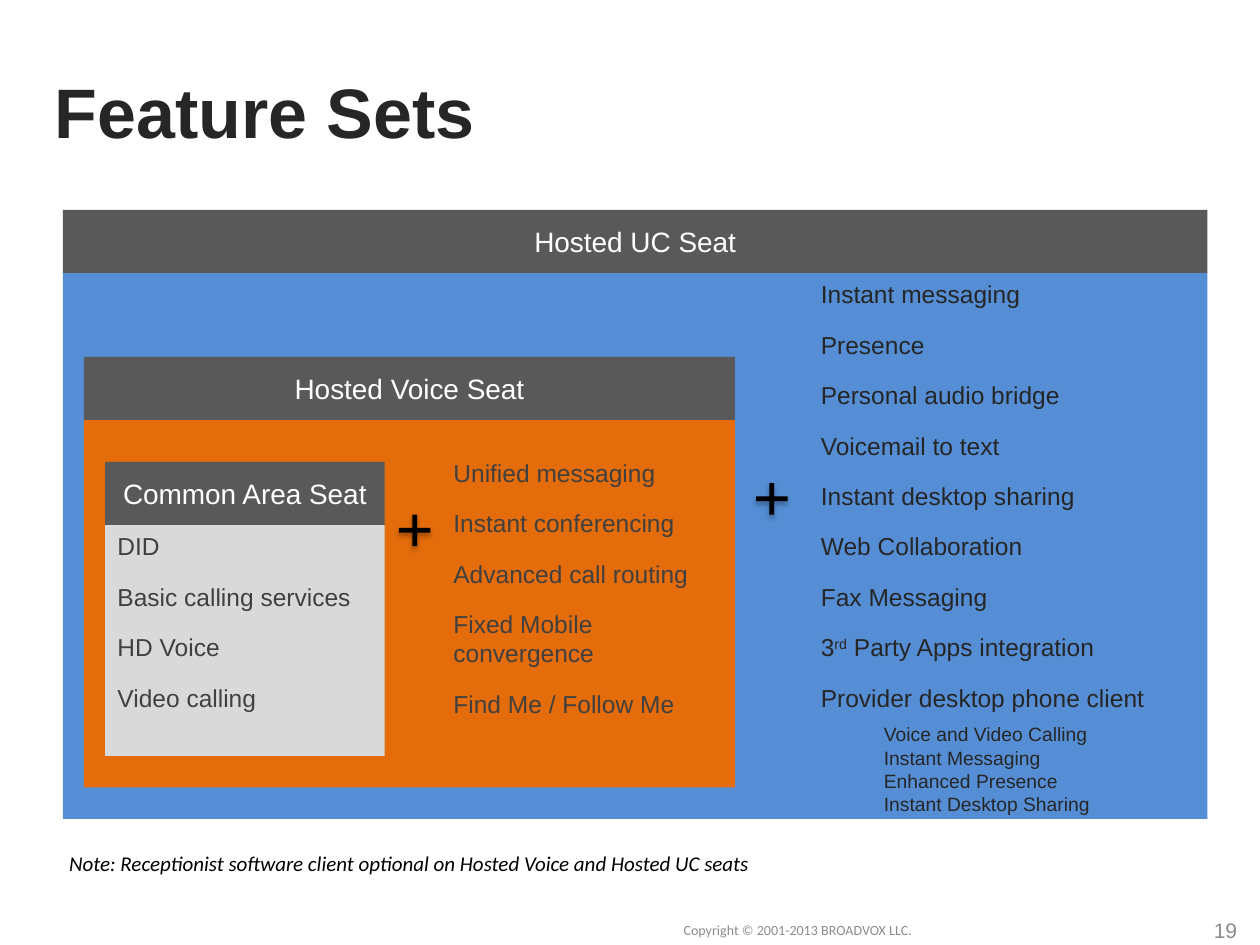
from collections import namedtuple

from lxml.etree import SubElement
from pptx import Presentation
from pptx.dml.color import RGBColor
from pptx.enum.shapes import MSO_SHAPE
from pptx.enum.text import MSO_ANCHOR, PP_ALIGN
from pptx.oxml.ns import qn
from pptx.util import Inches, Pt

GRID = Inches(1) / 12
HEADER_ROWS = 6
DARK, GREY, FOOTER_GREY = "262626", "404040", "8C8C8C"

Box = namedtuple("Box", "left top width height")


def inside(box, left, top, width, height):
    """Box given by its offset, in grid cells, from another box."""
    return Box(box.left + left, box.top + top, width, height)


def lengths(box):
    return [round(cells * GRID) for cells in box]


def colour(value):
    return RGBColor.from_string(value)


def write(frame, lines, size=14, color=DARK, font="Arial", bold=False, italic=False,
          align=PP_ALIGN.LEFT, anchor=MSO_ANCHOR.TOP, gap=0, level=0, wrap=True, append=False):
    """Write one paragraph per line; a line given as a tuple has its second part raised."""
    frame.word_wrap = wrap
    frame.vertical_anchor = anchor
    for index, line in enumerate(lines):
        first = index == 0 and not append
        paragraph = frame.paragraphs[0] if first else frame.add_paragraph()
        paragraph.alignment = align
        paragraph.level = level
        paragraph.space_before = Pt(0 if first else gap)
        paragraph.space_after = Pt(gap)
        if level:
            properties = paragraph._p.get_or_add_pPr()
            properties.set("marL", str(Inches(0.5) * level))
            properties.set("indent", "0")
        parts = line if isinstance(line, tuple) else (line,)
        for position, part in enumerate(parts):
            run = paragraph.add_run()
            run.text = part
            run.font.name, run.font.size = font, Pt(size)
            run.font.bold, run.font.italic = bold, italic
            run.font.color.rgb = colour(color)
            if position == 1:
                run.font._element.set("baseline", "30000")


def add_text(slide, box, lines, **text_format):
    frame = slide.shapes.add_textbox(*lengths(box)).text_frame
    write(frame, lines, **text_format)
    return frame


def add_filled(slide, kind, box, fill):
    shape = slide.shapes.add_shape(kind, *lengths(box))
    shape.shadow.inherit = False
    shape.fill.solid()
    shape.fill.fore_color.rgb = colour(fill)
    shape.line.fill.background()
    return shape


def add_seat(slide, box, name, fill):
    """Draw a seat panel with its header and return the text frame of its body."""
    body = Box(box.left, box.top + HEADER_ROWS, box.width, box.height - HEADER_ROWS)
    panel = add_filled(slide, MSO_SHAPE.RECTANGLE, body, fill)
    header = add_filled(slide, MSO_SHAPE.RECTANGLE, box._replace(height=HEADER_ROWS), "595959")
    write(header.text_frame, [name], size=16, color="FFFFFF",
          align=PP_ALIGN.CENTER, anchor=MSO_ANCHOR.MIDDLE)
    return panel.text_frame


def add_plus(slide, box):
    plus = add_filled(slide, MSO_SHAPE.CROSS, box, "000000")
    plus.adjustments[0] = 0.426
    effects = plus._element.spPr.find(qn("a:effectLst"))
    shadow = SubElement(effects, qn("a:outerShdw"), blurRad=str(Pt(3.1)),
                        dist=str(Pt(1.8)), dir="5400000", rotWithShape="0")
    black = SubElement(shadow, qn("a:srgbClr"), val="000000")
    SubElement(black, qn("a:alpha"), val="35000")


def add_common_area_seat(slide, box):
    body = add_seat(slide, box, "Common Area Seat", "D9D9D9")
    write(body, ["DID", "Basic calling services", "HD Voice", "Video calling"],
          color=GREY, gap=6)


def add_voice_seat(slide, box):
    add_seat(slide, box, "Hosted Voice Seat", "E46C0A")
    add_common_area_seat(slide, inside(box, 2, 10, 26.64, 28))
    add_plus(slide, inside(box, 30, 15, 3, 3))
    add_text(slide, inside(box, 34, 9, 27, 21),
             ["Unified messaging", "Instant conferencing", "Advanced call routing",
              "Fixed Mobile convergence", "Find Me / Follow Me"], color=GREY, gap=6)


def add_uc_seat(slide, box):
    add_seat(slide, box, "Hosted UC Seat", "558ED5")
    add_voice_seat(slide, inside(box, 2, 14, 62, 41))
    add_plus(slide, inside(box, 66, 26, 3, 3))
    features = add_text(slide, inside(box, 71, 6, 36, 51),
                        ["Instant messaging", "Presence", "Personal audio bridge",
                         "Voicemail to text", "Instant desktop sharing",
                         "Web Collaboration", "Fax Messaging",
                         ("3", "rd", " Party Apps integration"),
                         "Provider desktop phone client"], gap=6)
    write(features, ["Voice and Video Calling", "Instant Messaging", "Enhanced Presence",
                     "Instant Desktop Sharing"], size=11, level=1, append=True)


def add_title(slide, box, text):
    title = slide.shapes.title
    title.left, title.top, title.width, title.height = lengths(box)
    write(title.text_frame, [text], size=40, bold=True, anchor=MSO_ANCHOR.MIDDLE)


def add_footer(slide, top, height):
    add_text(slide, Box(57, top, 38, height), ["Copyright © 2001-2013 BROADVOX LLC."],
             size=8, font="Calibri", color=FOOTER_GREY,
             align=PP_ALIGN.CENTER, anchor=MSO_ANCHOR.MIDDLE)
    add_text(slide, Box(91, top, 28, height), ["19"], size=12, color=FOOTER_GREY,
             align=PP_ALIGN.RIGHT, anchor=MSO_ANCHOR.MIDDLE)


def main():
    presentation = Presentation()
    presentation.slide_width, presentation.slide_height = Inches(10), Inches(7.5)
    slide = presentation.slides.add_slide(presentation.slide_layouts[5])
    add_title(slide, Box(4, 5, 114, 11), "Feature Sets")
    add_uc_seat(slide, Box(6, 20, 109, 58))
    add_text(slide, Box(5.4, 80.4, 68.6, 3.6),
             ["Note: Receptionist software client optional on Hosted Voice and Hosted UC seats"],
             size=12, font="Calibri", color="000000", italic=True, wrap=False)
    add_footer(slide, 86.2, 4.8)
    presentation.save("out.pptx")


if __name__ == "__main__":
    main()
